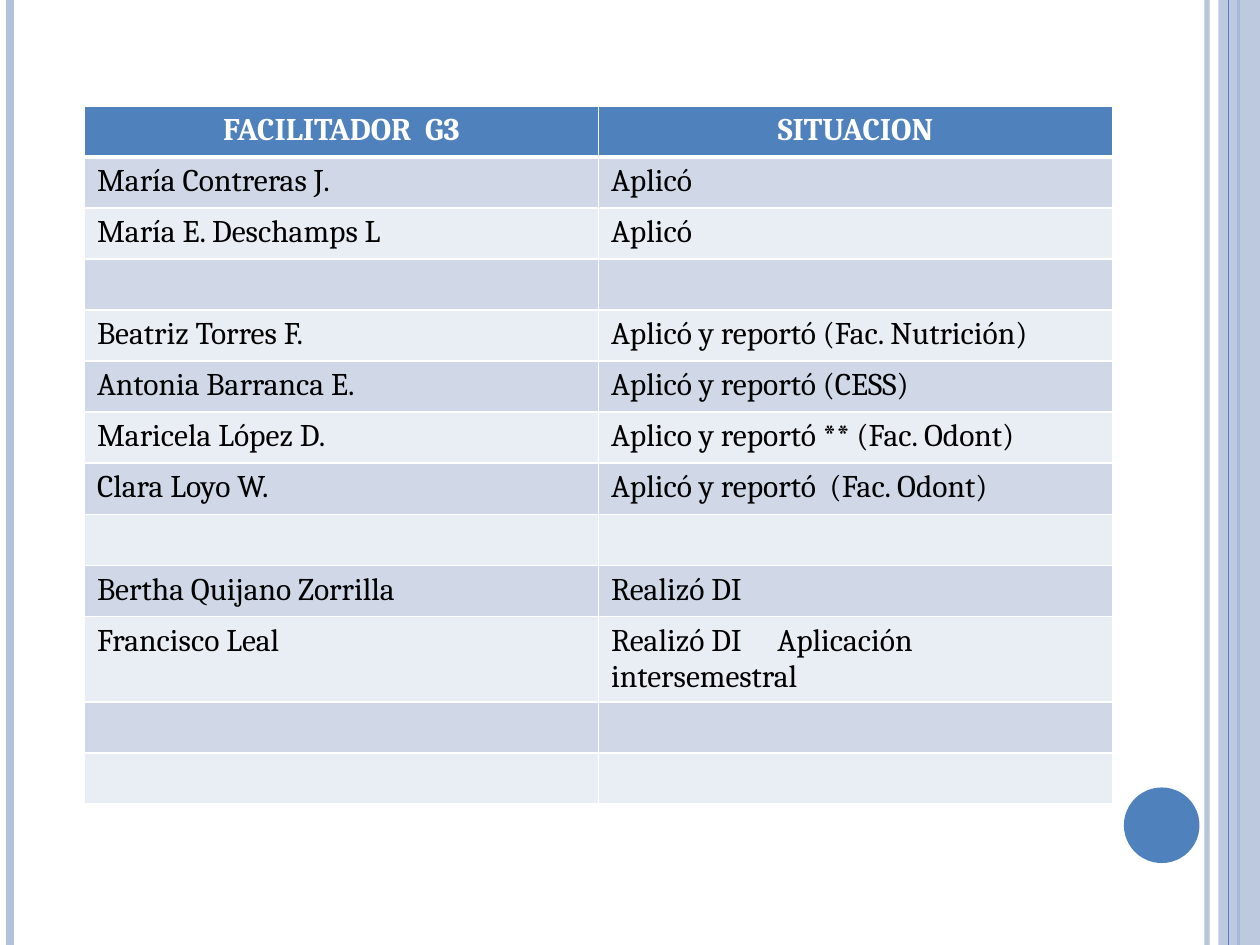
from dataclasses import dataclass

from pptx import Presentation
from pptx.dml.color import RGBColor
from pptx.enum.shapes import MSO_CONNECTOR, MSO_SHAPE
from pptx.enum.text import PP_ALIGN
from pptx.oxml.ns import qn
from pptx.util import Inches, Pt
from lxml.etree import SubElement

BLUE = "4F81BD"
PALE_BLUE = "B3C1DB"
WHITE = "FFFFFF"
BLACK = "000000"
BANDS = ("D0D8E8", "E9EDF4")
SLIDE_HEIGHT = 7.5
ROW_HEIGHT = 5.27 / 13
TAB_POSITION = 1.32


@dataclass
class Stripe:
    x: float
    color: str
    width: float
    opacity: int = 100


@dataclass
class Facilitator:
    name: str = ""
    situation: str = ""


BACK_STRIPES = [
    Stripe(9.58, PALE_BLUE, 3, 93),
    Stripe(0.08, PALE_BLUE, 4.5),
    Stripe(9.83, BLUE, 1.5),
]
FRONT_STRIPE = Stripe(9.75, BLUE, 0.75)

HEADER = Facilitator("FACILITADOR  G3", "SITUACION")
FACILITATORS = [
    Facilitator("María Contreras J.", "Aplicó"),
    Facilitator("María E. Deschamps L", "Aplicó"),
    Facilitator(),
    Facilitator("Beatriz Torres F.", "Aplicó y reportó (Fac. Nutrición)"),
    Facilitator("Antonia Barranca E.", "Aplicó y reportó (CESS)"),
    Facilitator("Maricela López D.", "Aplico y reportó ** (Fac. Odont)"),
    Facilitator("Clara Loyo W.", "Aplicó y reportó  (Fac. Odont)"),
    Facilitator(),
    Facilitator("Bertha Quijano Zorrilla", "Realizó DI"),
    Facilitator("Francisco Leal", "Realizó DI\tAplicación intersemestral"),
    Facilitator(),
    Facilitator(),
]


def set_color(fill, color: str, opacity: int = 100) -> None:
    fill.solid()
    fill.fore_color.rgb = RGBColor.from_string(color)
    if opacity < 100:
        color_element = fill._xPr.find(qn("a:solidFill"))[0]
        SubElement(color_element, qn("a:alpha"), val=str(opacity * 1000))


def add_stripe(slide, stripe: Stripe) -> None:
    x = Inches(stripe.x)
    line = slide.shapes.add_connector(
        MSO_CONNECTOR.STRAIGHT, x, 0, x, Inches(SLIDE_HEIGHT))
    line.line.width = Pt(stripe.width)
    set_color(line.line.fill, stripe.color, stripe.opacity)
    SubElement(line._element.spPr, qn("a:effectLst"))


def add_filled_shape(slide, kind, left: float, top: float, width: float,
                     height: float, color: str, opacity: int = 100) -> None:
    shape = slide.shapes.add_shape(
        kind, Inches(left), Inches(top), Inches(width), Inches(height))
    shape.shadow.inherit = False
    shape.line.fill.background()
    set_color(shape.fill, color, opacity)


def set_borders(cell, bottom_width: float) -> None:
    """Draw white borders; they must come before the cell's fill."""
    properties = cell._tc.get_or_add_tcPr()
    widths = {"a:lnL": 1, "a:lnR": 1, "a:lnT": 1, "a:lnB": bottom_width}
    for tag, width in widths.items():
        border = SubElement(properties, qn(tag), w=str(Pt(width)))
        fill = SubElement(border, qn("a:solidFill"))
        SubElement(fill, qn("a:srgbClr"), val=WHITE)


def add_tab_stop(paragraph) -> None:
    tabs = SubElement(paragraph._p.get_or_add_pPr(), qn("a:tabLst"))
    SubElement(tabs, qn("a:tab"), pos=str(Inches(TAB_POSITION)), algn="l")


def write_cell(cell, text: str, fill: str, is_header: bool,
               bottom_width: float) -> None:
    set_borders(cell, bottom_width)
    set_color(cell.fill, fill)
    paragraph = cell.text_frame.paragraphs[0]
    paragraph.text = text
    if is_header:
        paragraph.alignment = PP_ALIGN.CENTER
    if "\t" in text:
        add_tab_stop(paragraph)
    for run in paragraph.runs:
        run.font.name = "Cambria"
        run.font.size = Pt(18)
        run.font.bold = is_header
        set_color(run.font.fill, WHITE if is_header else BLACK)


def add_facilitator_table(slide) -> None:
    records = [HEADER, *FACILITATORS]
    table = slide.shapes.add_table(
        len(records), 2, Inches(0.67), Inches(0.84), Inches(8.16),
        Inches(ROW_HEIGHT * len(records))).table
    for index, record in enumerate(records):
        is_header = index == 0
        table.rows[index].height = Inches(ROW_HEIGHT)
        fill = BLUE if is_header else BANDS[(index - 1) % 2]
        for column, text in enumerate((record.name, record.situation)):
            write_cell(table.cell(index, column), text, fill, is_header,
                       bottom_width=3 if is_header else 1)


def main() -> None:
    presentation = Presentation()
    presentation.slide_width = Inches(10)
    presentation.slide_height = Inches(SLIDE_HEIGHT)
    slide = presentation.slides.add_slide(presentation.slide_layouts[6])
    for stripe in BACK_STRIPES:
        add_stripe(slide, stripe)
    add_filled_shape(slide, MSO_SHAPE.RECTANGLE, 9.67, 0, 0.33, SLIDE_HEIGHT,
                     PALE_BLUE, 87)
    add_stripe(slide, FRONT_STRIPE)
    add_filled_shape(slide, MSO_SHAPE.OVAL, 8.92, 6.25, 0.6, 0.6, BLUE)
    add_facilitator_table(slide)
    presentation.save("out.pptx")


if __name__ == "__main__":
    main()
